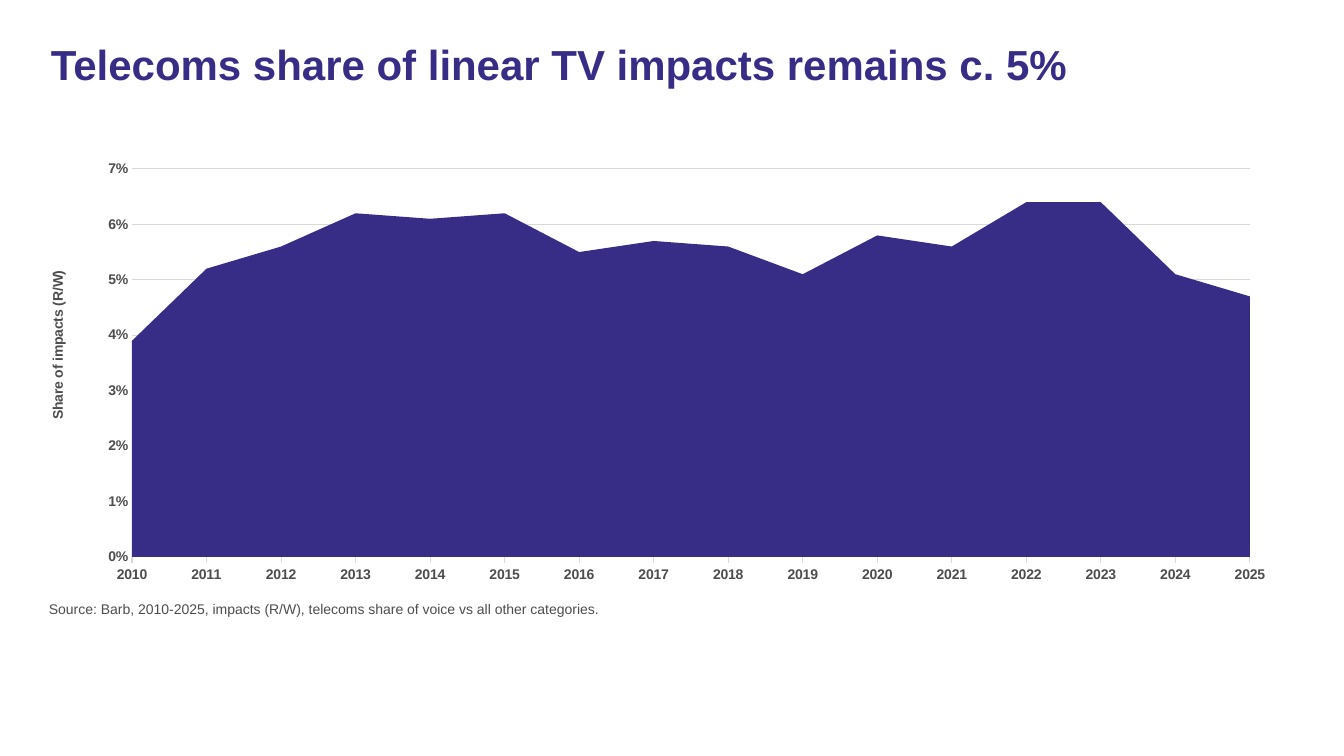
import pptx
import pptx.chart.data
import pptx.dml.color
import pptx.enum.chart
import pptx.enum.text
import pptx.oxml
import pptx.oxml.ns
import pptx.util

INDIGO = pptx.dml.color.RGBColor(0x37, 0x2D, 0x87)
GREY = pptx.dml.color.RGBColor(0x4D, 0x4D, 0x4D)
RULE = pptx.dml.color.RGBColor(0xD9, 0xD9, 0xD9)

YEARS = [str(year) for year in range(2010, 2026)]
SHARES = [0.039, 0.052, 0.056, 0.062, 0.061, 0.062, 0.055, 0.057,
          0.056, 0.051, 0.058, 0.056, 0.064, 0.064, 0.051, 0.047]


def assign(obj, values):
    for name, value in values.items():
        setattr(obj, name, value)


class Deck:
    font = "Arial"
    scale = 914400 / 100.8

    def __init__(self, width, height):
        self.prs = pptx.Presentation()
        self.prs.slide_width = self.px(width)
        self.prs.slide_height = self.px(height)
        self.s = self.prs.slides.add_slide(self.prs.slide_layouts[6])

    def px(self, n):
        return pptx.util.Emu(round(n * self.scale))

    def style(self, font, size, color, bold=False):
        assign(font, {"name": self.font, "size": pptx.util.Pt(size), "bold": bold})
        font.color.rgb = color

    def rule(self, line):
        line.color.rgb = RULE
        line.width = pptx.util.Pt(0.75)

    def text(self, box, words, size, color, bold=False, spacing=1.0):
        tf = self.s.shapes.add_textbox(*map(self.px, box)).text_frame
        assign(tf, {"word_wrap": True,
                    "vertical_anchor": pptx.enum.text.MSO_ANCHOR.TOP})
        p = tf.paragraphs[0]
        p.line_spacing = spacing
        r = p.add_run()
        r.text = words
        self.style(r.font, size, color, bold)

    def layout(self, parent, index, values):
        for old in parent.findall(pptx.oxml.ns.qn("c:layout")):
            parent.remove(old)
        items = "".join(f'<c:{tag} val="{value}"/>' for tag, value in values.items())
        parent.insert(index, pptx.oxml.parse_xml(
            f'<c:layout {pptx.oxml.ns.nsdecls("c")}>'
            f'<c:manualLayout>{items}</c:manualLayout></c:layout>'))

    def area_chart(self, box, plot, title_at, axis_title, cats, vals):
        left, top, width, height = box
        data = pptx.chart.data.CategoryChartData(number_format="0%")
        data.categories = cats
        data.add_series("Series 1", vals)
        chart = self.s.shapes.add_chart(
            pptx.enum.chart.XL_CHART_TYPE.AREA, *map(self.px, box), data).chart
        assign(chart, {"has_legend": False, "has_title": False})
        self.style(chart.font, 10, GREY, True)
        chart.plots[0].vary_by_categories = False
        fill = chart.plots[0].series[0].format.fill
        fill.solid()
        fill.fore_color.rgb = INDIGO

        ticks = pptx.enum.chart.XL_TICK_MARK
        cat, val = chart.category_axis, chart.value_axis
        assign(cat, {"major_tick_mark": ticks.OUTSIDE, "minor_tick_mark": ticks.NONE,
                     "has_major_gridlines": False})
        assign(val, {"major_tick_mark": ticks.NONE, "minor_tick_mark": ticks.NONE,
                     "has_major_gridlines": True, "minimum_scale": 0,
                     "maximum_scale": 0.07, "major_unit": 0.01})
        assign(val.tick_labels, {"number_format": "0%", "number_format_is_linked": False})
        for axis in (cat, val):
            self.style(axis.tick_labels.font, 10, GREY, True)
        self.rule(cat.format.line)
        self.rule(val.major_gridlines.format.line)
        val.format.line.fill.background()
        val._element.find(pptx.oxml.ns.qn("c:crossBetween")).set("val", "midCat")

        tf = val.axis_title.text_frame
        tf._txBody.bodyPr.set("rot", "-5400000")
        tf._txBody.bodyPr.set("vert", "horz")
        r = tf.paragraphs[0].add_run()
        r.text = axis_title
        self.style(r.font, 10, GREY, True)

        x, y, w, h = plot
        edge = {"xMode": "edge", "yMode": "edge"}
        self.layout(chart._chartSpace.chart.plotArea, 0, {
            "layoutTarget": "inner", **edge,
            "x": (x - left) / width, "y": (y - top) / height,
            "w": w / width, "h": h / height})
        x, y = title_at
        self.layout(val.axis_title._element, 1, {
            **edge, "x": (x - left) / width, "y": (y - top) / height})


def main():
    deck = Deck(1344, 756)
    deck.text((39, 596, 1250, 33),
              "Source: Barb, 2010-2025, impacts (R/W), telecoms share of voice "
              "vs all other categories.", 10, GREY)
    deck.text((41, 39, 1250, 113), "Telecoms share of linear TV impacts remains c. 5%",
              30, INDIGO, True, 0.9)
    deck.area_chart((41, 152, 1250, 440), (132, 169, 1118, 388), (46, 268),
                    "Share of impacts (R/W)", YEARS, SHARES)
    deck.prs.save("out.pptx")


if __name__ == "__main__":
    main()
